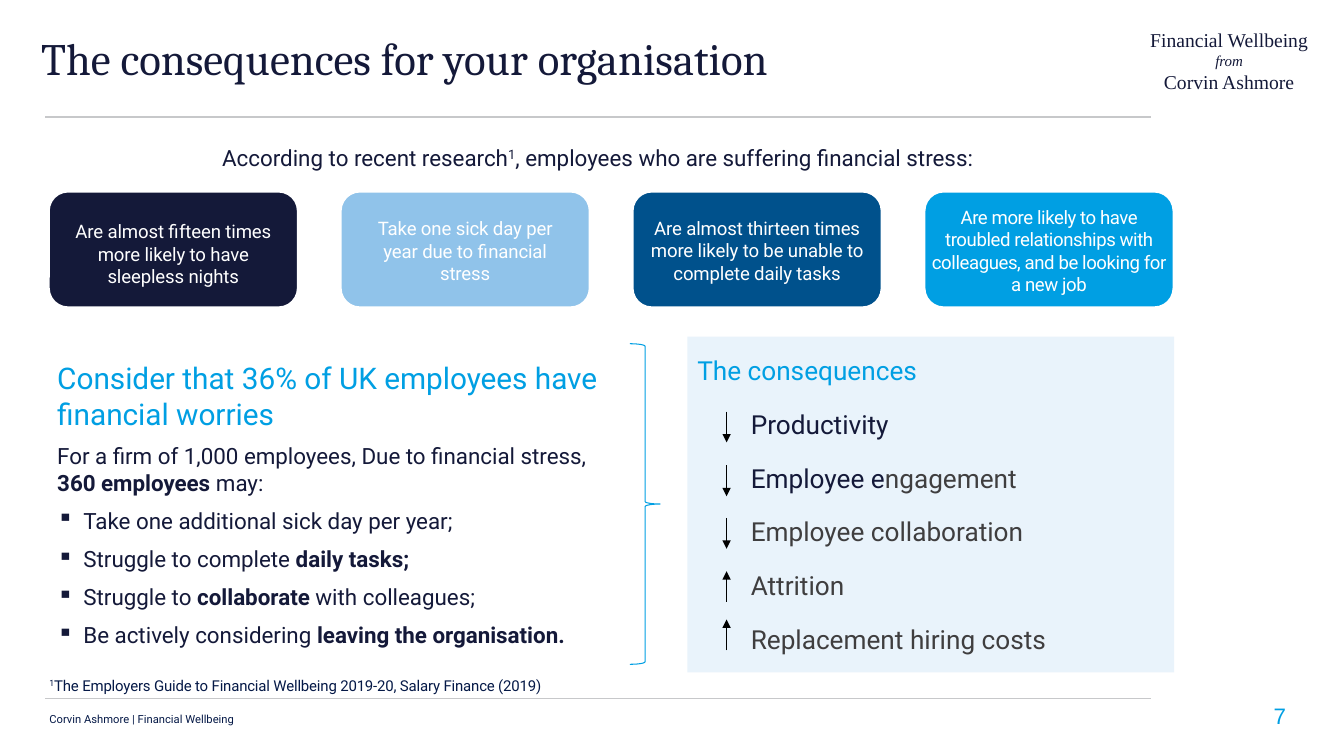
from lxml import etree
from pptx import Presentation
from pptx.dml.color import RGBColor
from pptx.enum.shapes import MSO_CONNECTOR, MSO_SHAPE
from pptx.enum.text import MSO_ANCHOR, PP_ALIGN
from pptx.oxml.ns import qn
from pptx.util import Pt

LEFT, CENTER, RIGHT = PP_ALIGN.LEFT, PP_ALIGN.CENTER, PP_ALIGN.RIGHT
TOP, MIDDLE, BOTTOM = MSO_ANCHOR.TOP, MSO_ANCHOR.MIDDLE, MSO_ANCHOR.BOTTOM
COLORS = {
    "navy": "141939", "footer": "051947", "cyan": "009FE3", "sky": "90C3EA",
    "blue": "00518C", "panel": "E9F3FB", "grey": "3F3E3F", "rule": "C7C8CA",
    "black": "000000", "white": "FFFFFF",
}
RGB = {name: RGBColor.from_string(value) for name, value in COLORS.items()}

deck = Presentation()
deck.slide_width, deck.slide_height = Pt(960), Pt(540)
page = deck.slides.add_slide(deck.slide_layouts[6])


def write(shape, paragraphs, size=16, color="navy", font="Roboto", align=LEFT,
          anchor=TOP, insets=(7.2, 3.6, 7.2, 3.6), after=0, spacing=0):
    """Fill a shape; each paragraph is (spans, options), each span (text, options)."""
    frame = shape.text_frame
    frame.word_wrap = True
    frame.vertical_anchor = anchor
    (frame.margin_left, frame.margin_top,
     frame.margin_right, frame.margin_bottom) = map(Pt, insets)
    for index, (spans, options) in enumerate(paragraphs):
        para = frame.paragraphs[0] if index == 0 else frame.add_paragraph()
        para.alignment = align
        para.space_after = Pt(after)
        properties = para._p.get_or_add_pPr()
        properties.set("marL", str(Pt(options.get("indent", 0))))
        if "bullet" in options:
            properties.set("indent", str(-Pt(options["indent"])))
            etree.SubElement(properties, qn("a:buChar")).set("char", options["bullet"])
        for text, style in spans:
            span = para.add_run()
            span.text = text
            span.font.name = font
            span.font.size = Pt(style.get("size", size))
            span.font.bold = style.get("bold", False)
            span.font.italic = style.get("italic", False)
            span.font.color.rgb = RGB[style.get("color", color)]
            span_properties = span._r.get_or_add_rPr()
            if spacing:
                span_properties.set("spc", str(round(spacing * 100)))
            if style.get("raised"):
                span_properties.set("baseline", "30000")


def add_line(x1, y1, x2, y2, color, width, arrow=False):
    line = page.shapes.add_connector(MSO_CONNECTOR.STRAIGHT, Pt(x1), Pt(y1), Pt(x2), Pt(y2))
    line.line.color.rgb = RGB[color]
    line.line.width = Pt(width)
    if arrow:
        outline = line.line._get_or_add_ln()
        etree.SubElement(outline, qn("a:tailEnd")).set("type", "triangle")
    etree.SubElement(line._element.spPr, qn("a:effectLst"))


# Title, corner name and rules
title = page.shapes.add_textbox(Pt(22.3), Pt(18.7), Pt(770), Pt(60))
write(title, [([("The consequences for your organisation", {})], {})], size=32, font="Cambria")

corner = page.shapes.add_textbox(Pt(798), Pt(16.6), Pt(160), Pt(54))
write(corner, [
    ([("Financial Wellbeing", {})], {}),
    ([("from", {"size": 10.7, "italic": True})], {}),
    ([("Corvin Ashmore", {})], {}),
], size=14, font="Times New Roman", align=CENTER, insets=(0, 3.6, 0, 3.6))

for rule_y, rule_width in ((83.5, 1), (499, 0.4)):
    add_line(32.4, rule_y, 822.2, rule_y, "rule", rule_width)

# Introduction
intro = page.shapes.add_textbox(Pt(23), Pt(99.4), Pt(808), Pt(26.6))
write(intro, [([
    ("According to recent research", {}), ("1", {"raised": True}),
    (", employees who are suffering financial stress:", {}),
], {})], align=CENTER)

# Row of cards: text, fill, side inset, top inset, letter spacing
cards = [
    ("Are almost fifteen times more likely to have sleepless nights", "navy", 11.5, 6, -0.1),
    ("Take one sick day per year due to financial stress", "sky", 9, 2, -0.1),
    ("Are almost thirteen times more likely to be unable to complete daily tasks",
     "blue", 3.5, 1.5, -0.1),
    ("Are more likely to have troubled relationships with colleagues, "
     "and be looking for a new job", "cyan", 0, 1.5, -0.3),
]
for index, (text, fill, side, top, spacing) in enumerate(cards):
    card = page.shapes.add_shape(MSO_SHAPE.ROUNDED_RECTANGLE,
                                 Pt(34.8 + index * 208.5), Pt(136.8), Pt(178), Pt(82.8))
    card.shadow.inherit = False
    card.fill.solid()
    card.fill.fore_color.rgb = RGB[fill]
    card.line.color.rgb = RGB["white"]
    card.line.width = Pt(1.5)
    write(card, [([(text, {})], {})], size=13.3, color="white", align=CENTER,
          anchor=MIDDLE, insets=(side, top, side, 0), spacing=spacing)

# Effect on a firm
bold = {"bold": True}
bullet = {"bullet": "▪", "indent": 18.7}
firm = page.shapes.add_textbox(Pt(33.8), Pt(252), Pt(409.7), Pt(216))
write(firm, [
    ([("Consider that 36% of UK employees have financial worries",
       {"size": 21.3, "color": "cyan"})], {}),
    ([("For a firm of 1,000 employees, Due to financial stress, ", {}),
      ("360 employees ", bold), ("may:", {})], {}),
    ([("Take one additional sick day per year;", {})], bullet),
    ([("Struggle to complete ", {}), ("daily tasks;", bold)], bullet),
    ([("Struggle to ", {}), ("collaborate", bold), (" with colleagues;", {})], bullet),
    ([("Be actively considering ", {}), ("leaving the organisation.", bold)], bullet),
], anchor=MIDDLE, after=8)

brace = page.shapes.add_shape(MSO_SHAPE.RIGHT_BRACE, Pt(450), Pt(245.5), Pt(21.6), Pt(229))
brace.shadow.inherit = False
brace.fill.background()
brace.line.color.rgb = RGB["cyan"]
brace.line.width = Pt(0.75)

# Consequences panel
item = {"indent": 38.2}
grey = {"color": "grey"}
panel = page.shapes.add_shape(MSO_SHAPE.RECTANGLE, Pt(491), Pt(240.5), Pt(347.8), Pt(239.8))
panel.shadow.inherit = False
panel.fill.solid()
panel.fill.fore_color.rgb = RGB["panel"]
panel.line.fill.background()
write(panel, [
    ([("The consequences", {"color": "cyan"})], {}),
    ([("Productivity", {})], item),
    ([("Employee e", {}), ("ngagement", grey)], item),
    ([("Employee collaboration", grey)], item),
    ([("Attrition", grey)], item),
    ([("Replacement hiring costs", grey)], item),
], size=18.7, anchor=MIDDLE, insets=(7.2, 11.5, 7.2, 11.5), after=16)

# Arrows from start to tip: three falling, two rising
for start, tip in ((294, 316), (332.5, 354.5), (370, 392), (430, 408), (464.5, 442.5)):
    add_line(519, start, 519, tip, "black", 0.75, arrow=True)

# Footnote, footer and page number
footnote = page.shapes.add_textbox(Pt(32.4), Pt(480.2), Pt(582), Pt(16))
write(footnote, [([
    ("1", {"raised": True}),
    ("The Employers Guide to Financial Wellbeing 2019-20, Salary Finance (2019)", {}),
], {})], size=10.7, color="footer", insets=(2.9, 2.9, 0, 0), spacing=-0.1)

footer = page.shapes.add_textbox(Pt(32.4), Pt(509), Pt(160), Pt(10))
write(footer, [([("Corvin Ashmore | Financial Wellbeing", {})], {})],
      size=8, color="footer", insets=(2.9, 0, 0, 0))

number = page.shapes.add_textbox(Pt(865.4), Pt(476.6), Pt(53.3), Pt(44))
write(number, [([("7", {})], {})], color="cyan", font="Arial", align=RIGHT,
      anchor=BOTTOM, insets=(0, 0, 0, 0))

deck.save("out.pptx")
